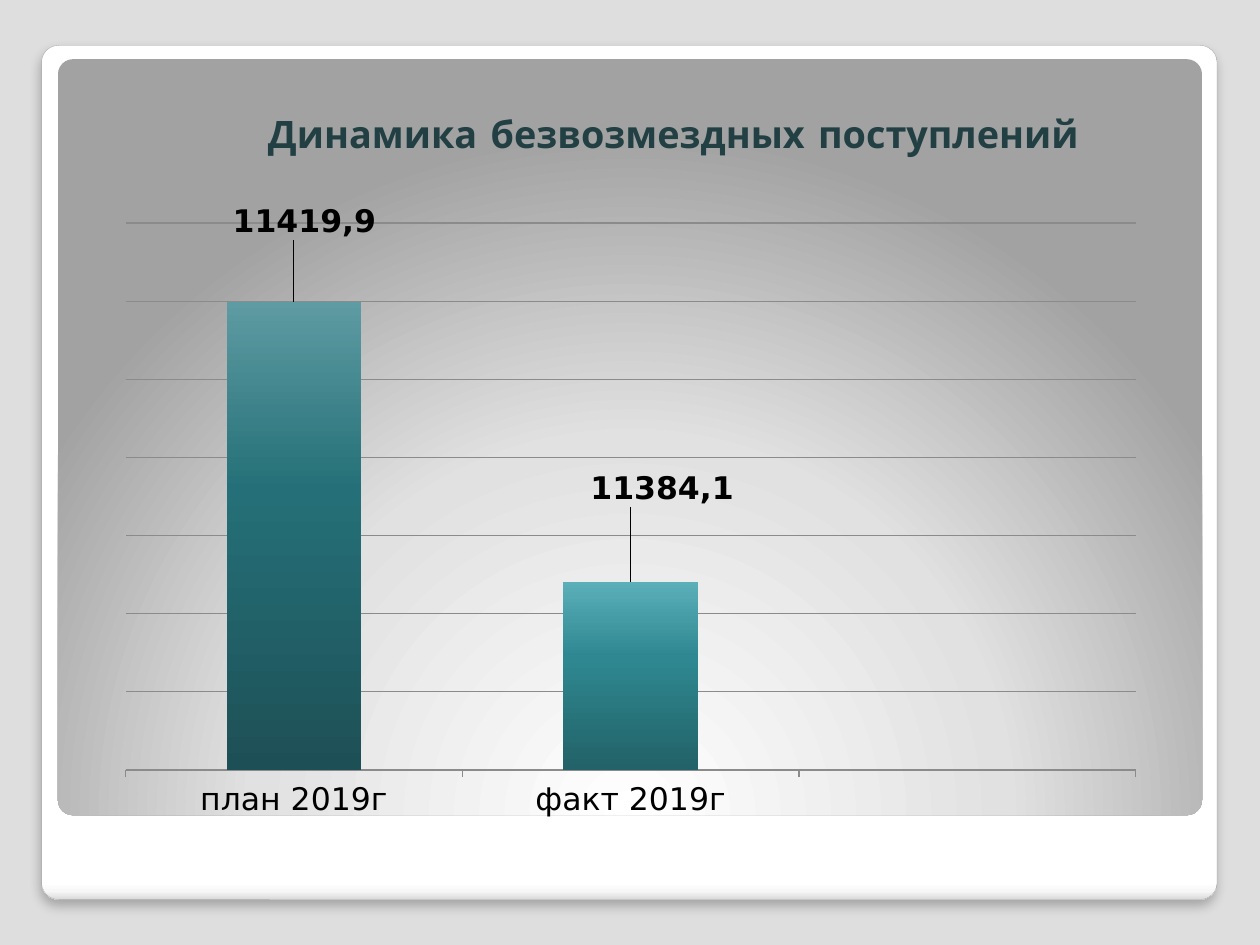
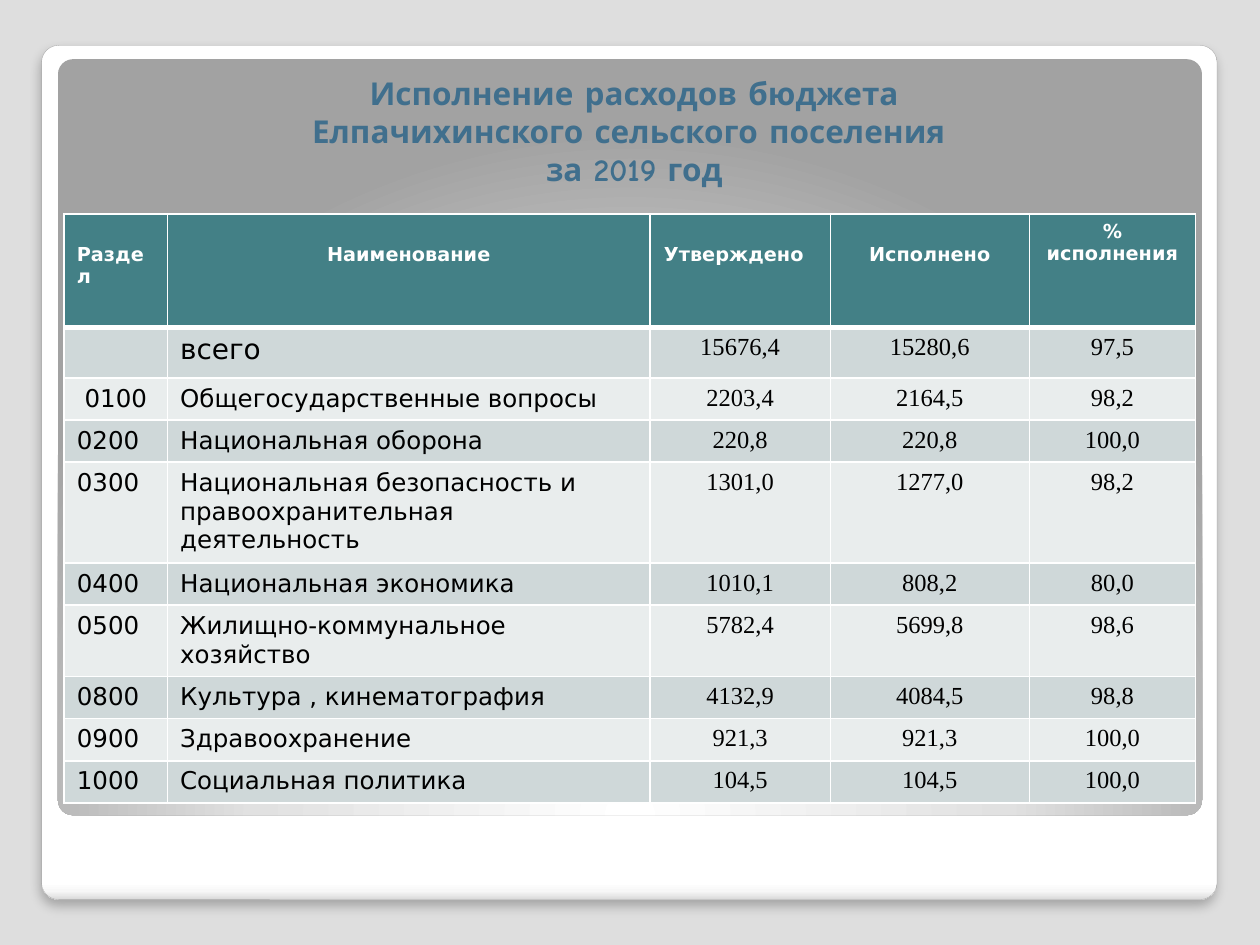
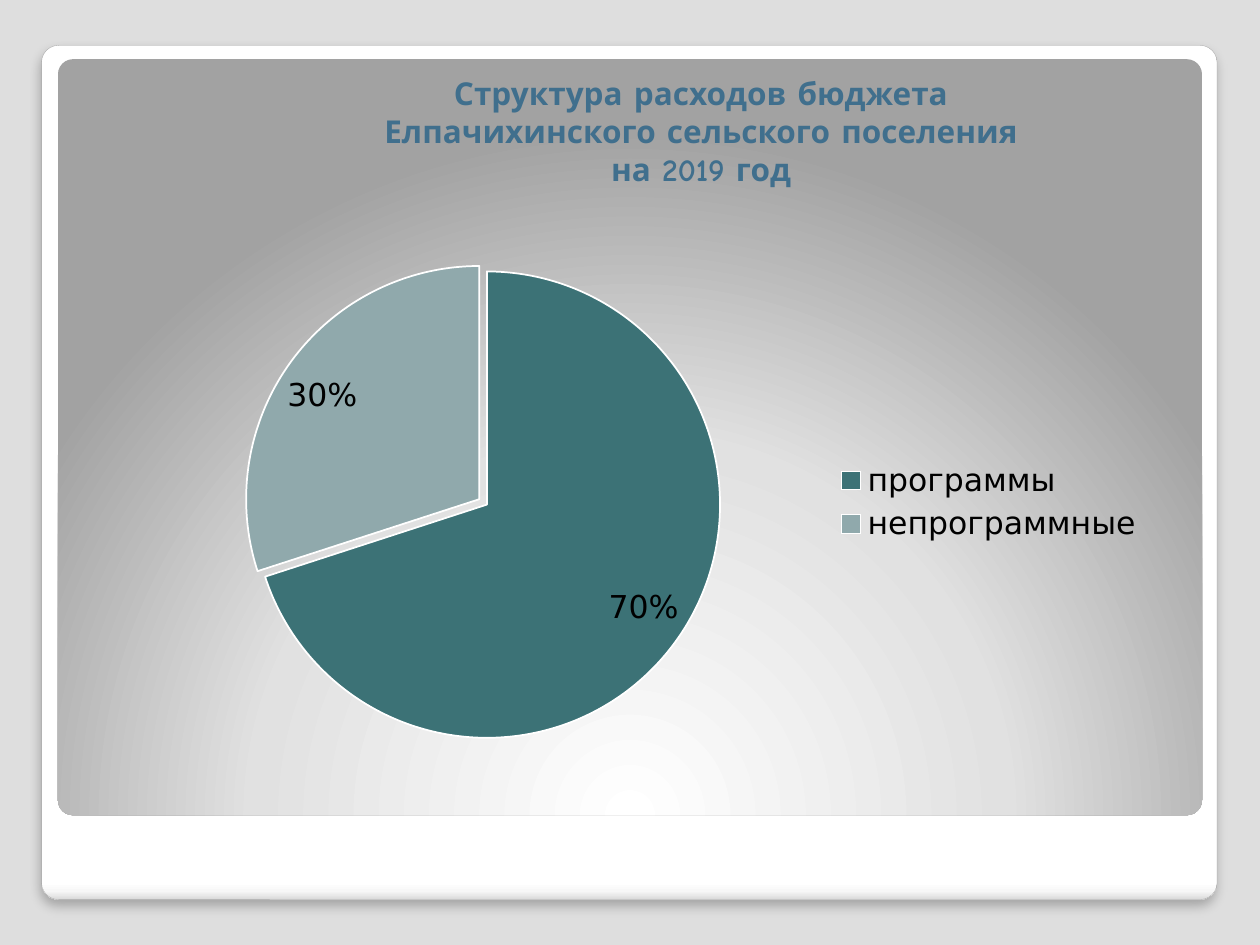
from lxml import etree
from pptx import Presentation
from pptx.chart.data import CategoryChartData
from pptx.dml.color import RGBColor
from pptx.enum.chart import (XL_CHART_TYPE, XL_LABEL_POSITION, XL_LEGEND_POSITION,
                             XL_TICK_LABEL_POSITION, XL_TICK_MARK)
from pptx.enum.shapes import MSO_SHAPE
from pptx.enum.text import MSO_ANCHOR, PP_ALIGN
from pptx.oxml import parse_xml
from pptx.oxml.ns import nsdecls, qn
from pptx.util import Inches, Pt

WHITE = RGBColor(0xFF, 0xFF, 0xFF)
BLACK = RGBColor(0, 0, 0)
BACKDROP = RGBColor(0xDE, 0xDE, 0xDE)
CARD_EDGE = RGBColor(0xA4, 0xA4, 0xA4)
GRID = RGBColor(0x8B, 0x8B, 0x8B)
DARK_TEAL = RGBColor(0x22, 0x40, 0x43)
STEEL_BLUE = RGBColor(0x40, 0x6F, 0x8D)
HEADER_TEAL = RGBColor(0x43, 0x80, 0x86)
BAND_DARK = RGBColor(0xCF, 0xD8, 0xD9)
BAND_LIGHT = RGBColor(0xE9, 0xED, 0xED)
PIE_COLORS = [RGBColor(0x3C, 0x72, 0x76), RGBColor(0x90, 0xA9, 0xAC)]

CARD_STOPS = [(0, WHITE), (98, WHITE), (99, RGBColor(0xF7, 0xF7, 0xF7)),
              (100, RGBColor(0xDA, 0xDA, 0xDA))]
PANEL_STOPS = [(0, WHITE), (55, RGBColor(0xE1, 0xE1, 0xE1)), (100, RGBColor(0xA2, 0xA2, 0xA2))]
PLAN_STOPS = [(0, RGBColor(0x5E, 0x9B, 0xA2)), (40, RGBColor(0x25, 0x70, 0x78)),
              (100, RGBColor(0x1D, 0x50, 0x56))]
FACT_STOPS = [(0, RGBColor(0x5B, 0xAF, 0xB9)), (40, RGBColor(0x2F, 0x88, 0x91)),
              (100, RGBColor(0x22, 0x62, 0x68))]
DOWNWARD = '<a:lin ang="5400000" scaled="0"/>'
FROM_BELOW = ('<a:path path="circle"><a:fillToRect l="50000" t="175000" '
              'r="50000" b="-75000"/></a:path>')
NO_LEADER_LINES = (
    f'<c:extLst {nsdecls("c")}><c:ext uri="{{CE6537A1-D6FC-4f65-9D91-7224C49458BB}}" '
    'xmlns:c15="http://schemas.microsoft.com/office/drawing/2012/chart">'
    '<c15:showLeaderLines val="0"/></c:ext></c:extLst>')

BODY_FONT = "DejaVu Sans"
TITLE_FONT = "Comic Neue"
NUMBER_FONT = "Times New Roman"

COLUMN_WIDTHS = [0.82, 3.83, 1.43, 1.58, 1.32]
ROW_HEIGHTS = [0.9, 0.4, 0.33, 0.33, 0.79, 0.33, 0.56, 0.33, 0.33, 0.33]
HEADINGS = ["Раздел", "Наименование", "Утверждено", "Исполнено", "%\nисполнения"]
EXPENSES = [
    ("", "всего", "15676,4", "15280,6", "97,5"),
    (" 0100", "Общегосударственные вопросы", "2203,4", "2164,5", "98,2"),
    ("0200", "Национальная оборона", "220,8", "220,8", "100,0"),
    ("0300", "Национальная безопасность и правоохранительная деятельность",
     "1301,0", "1277,0", "98,2"),
    ("0400", "Национальная экономика", "1010,1", "808,2", "80,0"),
    ("0500", "Жилищно-коммунальное хозяйство", "5782,4", "5699,8", "98,6"),
    ("0800", "Культура , кинематография", "4132,9", "4084,5", "98,8"),
    ("0900", "Здравоохранение", "921,3", "921,3", "100,0"),
    ("1000", "Социальная политика", "104,5", "104,5", "100,0"),
]


def inches(box):
    return [Inches(length) for length in box]


def set_gradient(fill, stops, direction):
    fill.solid()
    stop_list = "".join(f'<a:gs pos="{pos * 1000}"><a:srgbClr val="{color}"/></a:gs>'
                        for pos, color in stops)
    solid = fill._xPr.find(qn("a:solidFill"))
    solid.getparent().replace(solid, parse_xml(
        f'<a:gradFill {nsdecls("a")} rotWithShape="1"><a:gsLst>{stop_list}</a:gsLst>'
        f'{direction}</a:gradFill>'))


def style_font(font, size, color, name=BODY_FONT, bold=False):
    font.size, font.name, font.bold = Pt(size), name, bold
    font.color.rgb = color


def add_rounded_panel(slide, box, stops, direction):
    panel = slide.shapes.add_shape(MSO_SHAPE.ROUNDED_RECTANGLE, *inches(box))
    panel.adjustments[0] = 0.02
    set_gradient(panel.fill, stops, direction)
    panel.line.fill.background()
    panel.shadow.inherit = False
    return panel


def add_framed_slide(prs):
    """Add a slide with the shared backdrop, white card and grey panel."""
    slide = prs.slides.add_slide(prs.slide_layouts[6])
    slide.background.fill.solid()
    slide.background.fill.fore_color.rgb = BACKDROP
    card = add_rounded_panel(slide, (0.33, 0.36, 9.33, 6.78), CARD_STOPS, DOWNWARD)
    card.line.color.rgb = CARD_EDGE
    card.line.width = Pt(0.16)
    card._element.spPr.find(qn("a:effectLst")).append(parse_xml(
        f'<a:outerShdw {nsdecls("a")} blurRad="{Pt(6)}" dist="{Pt(4)}" dir="5400000" '
        'algn="t" rotWithShape="0"><a:srgbClr val="000000"><a:alpha val="25000"/>'
        '</a:srgbClr></a:outerShdw>'))
    add_rounded_panel(slide, (0.46, 0.47, 9.08, 6), PANEL_STOPS, FROM_BELOW)
    return slide


def add_title(slide, box, lines, size=18, color=STEEL_BLUE, indent=0.1, lift=0.05):
    frame = slide.shapes.add_textbox(*inches(box)).text_frame
    frame.word_wrap = True
    frame.vertical_anchor = MSO_ANCHOR.BOTTOM
    frame.margin_left = Inches(indent)
    frame.margin_bottom = Inches(lift)
    paragraph = frame.paragraphs[0]
    paragraph.alignment = PP_ALIGN.CENTER
    for index, line in enumerate(lines):
        if index:
            paragraph.add_line_break()
        run = paragraph.add_run()
        run.text = line
        style_font(run.font, size, color, TITLE_FONT, bold=True)


def add_styled_chart(slide, box, kind, categories, values, number_format, layout):
    data = CategoryChartData(number_format=number_format)
    data.categories = categories
    data.add_series("Series 1", values)
    chart = slide.shapes.add_chart(kind, *inches(box), data).chart
    chart.has_title = False
    chart.has_legend = False
    style_font(chart.font, 18, BLACK)
    plot_area = chart._chartSpace.chart.plotArea
    for old in plot_area.findall(qn("c:layout")):
        plot_area.remove(old)
    plot_area.insert(0, manual_layout(layout, inner=True))
    return chart


def manual_layout(fractions, inner=False):
    layout = parse_xml(f'<c:layout {nsdecls("c")}><c:manualLayout/></c:layout>')
    settings = [("layoutTarget", "inner"), ("xMode", "edge"), ("yMode", "edge")] if inner else []
    for tag, value in settings + list(zip("xywh", fractions)):
        etree.SubElement(layout[0], qn(f"c:{tag}")).set("val", str(value))
    return layout


def add_revenue_chart(slide, box):
    chart = add_styled_chart(slide, box, XL_CHART_TYPE.COLUMN_CLUSTERED,
                             ["план 2019г", "факт 2019г", ""], [11419.9, 11384.1, None],
                             "0.0", (0.02, 0.02, 0.96, 0.87))
    amounts = chart.value_axis
    amounts.minimum_scale, amounts.maximum_scale, amounts.major_unit = 11360, 11430, 10
    amounts.visible = False
    amounts.major_gridlines.format.line.color.rgb = GRID
    years = chart.category_axis
    years.format.line.color.rgb = GRID
    years.major_tick_mark = XL_TICK_MARK.OUTSIDE
    years.tick_label_position = XL_TICK_LABEL_POSITION.LOW
    plot = chart.plots[0]
    plot.gap_width = 150
    plot.vary_by_categories = False
    revenue = plot.series[0]
    unnamed_year = revenue._element.find(qn("c:cat")).findall(".//" + qn("c:pt"))[-1]
    unnamed_year.getparent().remove(unnamed_year)
    bars = [(PLAN_STOPS, "11419,9", (0.01, -0.09)), (FACT_STOPS, "11384,1", (0.03, -0.11))]
    for index, (stops, amount, offset) in enumerate(bars):
        point = revenue.points[index]
        set_gradient(point.format.fill, stops, DOWNWARD)
        label = point.data_label
        run = label.text_frame.paragraphs[0].add_run()
        run.text = amount
        style_font(run.font, 18, BLACK, bold=True)
        label.position = XL_LABEL_POSITION.OUTSIDE_END
        label._get_or_add_dLbl().insert(1, manual_layout(offset))
    revenue.data_labels.show_value = True
    revenue._element.find(qn("c:dLbls")).append(parse_xml(NO_LEADER_LINES))


def add_structure_chart(slide, box):
    chart = add_styled_chart(slide, box, XL_CHART_TYPE.PIE, ["программы", "непрограммные"],
                             [0.7, 0.3], "0%", (0.12, 0.09, 0.46, 0.81))
    chart.has_legend = True
    chart.legend.position = XL_LEGEND_POSITION.RIGHT
    chart.legend.include_in_layout = False
    style_font(chart.legend.font, 18, BLACK)
    plot = chart.plots[0]
    plot.vary_by_categories = True
    shares = plot.series[0]
    for index, color in enumerate(PIE_COLORS):
        slice_format = shares.points[index].format
        slice_format.fill.solid()
        slice_format.fill.fore_color.rgb = color
        slice_format.line.color.rgb = WHITE
        slice_format.line.width = Pt(1)
    programme_slice = shares._element.find(qn("c:dPt"))
    programme_slice.find(qn("c:spPr")).addprevious(
        parse_xml(f'<c:explosion {nsdecls("c")} val="4"/>'))
    labels = shares.data_labels
    labels.show_value = True
    labels.number_format = "0%"
    labels.number_format_is_linked = False
    labels.position = XL_LABEL_POSITION.BEST_FIT
    style_font(labels.font, 18, BLACK)


def set_borders(cell, bottom):
    properties = cell._tc.get_or_add_tcPr()
    widths = {"lnL": 1, "lnR": 1, "lnT": 1, "lnB": bottom}
    for index, (side, width) in enumerate(widths.items()):
        properties.insert(index, parse_xml(
            f'<a:{side} {nsdecls("a")} w="{Pt(width)}"><a:solidFill>'
            f'<a:srgbClr val="{WHITE}"/></a:solidFill></a:{side}>'))


def fill_cell(cell, text, color, alignment, font, border=1):
    """Write the text with font given as (size, color, name, bold)."""
    cell.fill.solid()
    cell.fill.fore_color.rgb = color
    set_borders(cell, border)
    frame = cell.text_frame
    for index, line in enumerate(text.split("\n")):
        paragraph = frame.add_paragraph() if index else frame.paragraphs[0]
        paragraph.alignment = alignment
        if line:
            run = paragraph.add_run()
            run.text = line
            style_font(run.font, *font)


def add_expense_table(slide, left, top):
    table = slide.shapes.add_table(len(ROW_HEIGHTS), len(COLUMN_WIDTHS), *inches(
        (left, top, sum(COLUMN_WIDTHS), sum(ROW_HEIGHTS)))).table
    for column, width in zip(table.columns, COLUMN_WIDTHS):
        column.width = Inches(width)
    for row, height in zip(table.rows, ROW_HEIGHTS):
        row.height = Inches(height)
    for column, heading in enumerate(HEADINGS):
        cell = table.cell(0, column)
        fill_cell(cell, heading, HEADER_TEAL, PP_ALIGN.CENTER if column else PP_ALIGN.LEFT,
                  (11, WHITE, BODY_FONT, True), border=3)
        cell.margin_top = Inches(0.05 if "\n" in heading else 0.23)
    table.cell(0, HEADINGS.index("Утверждено")).margin_right = Inches(0.2)
    for row, expense in enumerate(EXPENSES, start=1):
        band = BAND_DARK if row % 2 else BAND_LIGHT
        for column, text in enumerate(expense):
            is_number = column > 1
            size = 16 if text == "всего" else 14
            fill_cell(table.cell(row, column), text, band,
                      PP_ALIGN.CENTER if is_number else PP_ALIGN.LEFT,
                      (size, BLACK, NUMBER_FONT if is_number else BODY_FONT))


def main():
    prs = Presentation()
    prs.slide_width, prs.slide_height = Inches(10), Inches(7.5)

    revenue = add_framed_slide(prs)
    add_title(revenue, (0.91, 0.77, 8.19, 0.54), ["Динамика безвозмездных поступлений"],
              size=21.6, color=DARK_TEAL, indent=0.78, lift=0.07)
    add_revenue_chart(revenue, (0.83, 1.62, 8.35, 5.04))

    expenses = add_framed_slide(prs)
    add_title(expenses, (0.35, 0.99, 9.37, 0.55),
              [" Исполнение расходов бюджета ", "Елпачихинского сельского поселения ",
               "за 2019 год"])
    add_expense_table(expenses, 0.51, 1.7)

    structure = add_framed_slide(prs)
    add_title(structure, (1.54, 0.44, 7.96, 1.1),
              [" Структура расходов бюджета", " Елпачихинского сельского поселения",
               " на 2019 год"])
    add_structure_chart(structure, (0.91, 1.7, 8.27, 4.57))

    prs.save("out.pptx")


if __name__ == "__main__":
    main()
